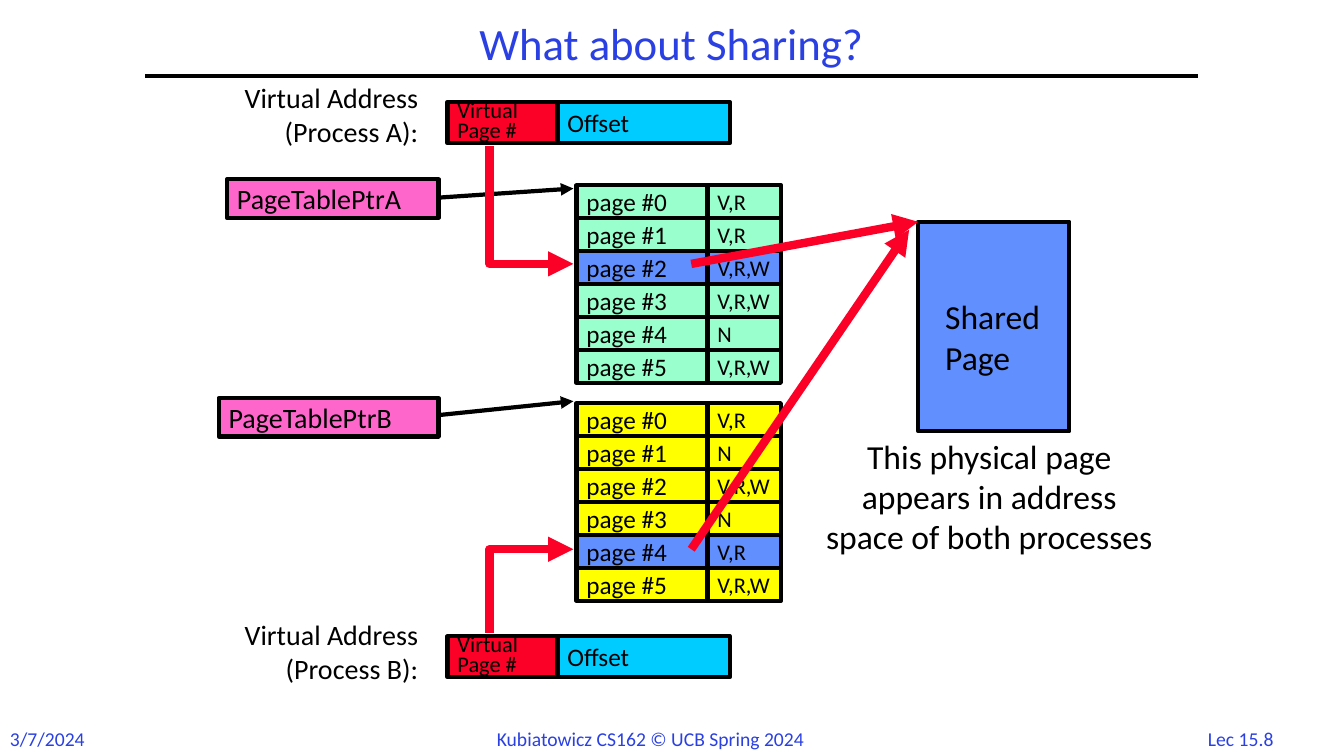
"""Build a slide on two processes that share one physical page."""
from lxml.etree import SubElement
from pptx import Presentation
from pptx.dml.color import RGBColor
from pptx.enum.shapes import MSO_CONNECTOR, MSO_SHAPE
from pptx.enum.text import MSO_ANCHOR, PP_ALIGN
from pptx.oxml.ns import qn
from pptx.util import Cm, Pt

BLACK = RGBColor(0, 0, 0)
BLUE = RGBColor(0x2A, 0x40, 0xE2)
RED = RGBColor(0xFC, 0x01, 0x28)
CYAN = RGBColor(0, 0xCC, 0xFF)
PINK = RGBColor(0xFF, 0x66, 0xCC)
GREEN = RGBColor(0x99, 0xFF, 0xCC)
YELLOW = RGBColor(0xFF, 0xFF, 0)
SHARED = RGBColor(0x61, 0x8F, 0xFD)
LEFT, MID, RIGHT = PP_ALIGN.LEFT, PP_ALIGN.CENTER, PP_ALIGN.RIGHT

TITLE = "What about Sharing?"
FOOT = [
    ("3/7/2024", 0, 2.44, LEFT),
    ("Kubiatowicz CS162 © UCB Spring 2024", 12.27, 9.35, LEFT),
    ("Lec 15.8", 29.9, 2.74, MID),
]
CAPTION = "This physical page\nappears in address\nspace of both processes"
TASKS = [
    dict(name="A", rights=["V,R", "V,R", "V,R,W", "V,R,W", "N", "V,R,W"],
         hit=2, fill=GREEN, top=4.67, label=1.91, addr=2.57, turn=(3.68, 6.65),
         ptr=(5.72, 4.52, 5.33, 0.97), link=(4.98, 4.75), end=(23.14, 5.59)),
    dict(name="B", rights=["V,R", "N", "V,R,W", "N", "V,R", "V,R,W"],
         hit=4, fill=YELLOW, top=10.16, label=15.44, addr=16.03, turn=(15.95, 13.84),
         ptr=(5.51, 10.03, 5.54, 0.97), link=(10.46, 10.11), end=(22.91, 5.79)),
]
ROW = 0.83
PAGE_X, PAGE_W = 14.53, 3.33
RIGHT_X, RIGHT_W = 17.83, 1.85
TIP_X = 14.45

deck = Presentation()
deck.slide_width, deck.slide_height = Cm(33.87), Cm(19.05)
slide = deck.slides.add_slide(deck.slide_layouts[6])
shapes = slide.shapes


def write(text, box, size=20, color=BLACK, fill=None, align=LEFT, space=None,
          anchor=None, wrap=False):
    """Add text in a plain box, or in a bordered one when a fill is given."""
    place = [Cm(n) for n in box]
    if fill is None:
        item = shapes.add_textbox(*place)
    else:
        item = shapes.add_shape(MSO_SHAPE.RECTANGLE, *place)
        item.shadow.inherit = False
        item.fill.solid()
        item.fill.fore_color.rgb = fill
        item.line.color.rgb = BLACK
        item.line.width = Pt(3)
        anchor = MSO_ANCHOR.MIDDLE
    frame = item.text_frame
    frame.word_wrap = wrap
    frame.vertical_anchor = anchor or MSO_ANCHOR.TOP
    for i, part in enumerate(text.split("\n") if text else []):
        para = frame.add_paragraph() if i else frame.paragraphs[0]
        para.alignment = align
        if space:
            para.line_spacing = space
        run = para.add_run()
        run.text = part
        run.font.name = "Calibri"
        run.font.size = Pt(size)
        run.font.color.rgb = color


def stroke(item, color, width, head=True):
    """Set the line style and the arrowhead."""
    item.line.color.rgb = color
    item.line.width = Pt(width)
    if head:
        SubElement(item.line._get_or_add_ln(), qn("a:tailEnd"), type="triangle")


def link(x1, y1, x2, y2, color=BLACK, width=3, head=True):
    """Draw a straight line."""
    item = shapes.add_connector(MSO_CONNECTOR.STRAIGHT, Cm(x1), Cm(y1), Cm(x2), Cm(y2))
    stroke(item, color, width, head)
    SubElement(item._element.spPr, qn("a:effectLst"))


def bend(y1, y2, x1=12.34, x2=TIP_X):
    """Draw the elbow arrow from an address to its page."""
    path = shapes.build_freeform(Cm(x1), Cm(y1))
    path.add_line_segments([(Cm(x1), Cm(y2)), (Cm(x2), Cm(y2))], close=False)
    item = path.convert_to_shape()
    item.shadow.inherit = False
    item.fill.background()
    stroke(item, RED, 6)


for text, x, w, align in FOOT:
    write(text, (x, 18.19, w, 0.86), size=14, color=BLUE, align=align)
link(3.66, 1.91, 30.2, 1.91, head=False)
write(TITLE, (3.66, 0.43, 26.52, 1.47), size=32, color=BLUE, align=MID,
      space=0.9, anchor=MSO_ANCHOR.MIDDLE, wrap=True)

for task in TASKS:
    name, addr = task["name"], task["addr"]
    write(f"Virtual Address\n(Process {name}):", (5.51, task["label"], 5.28, 1.96), align=RIGHT)
    write("Offset", (14.05, addr, 4.34, 1.04), size=18, fill=CYAN)
    write("Virtual\nPage #", (11.28, addr, 2.77, 1.04), size=16, fill=RED, space=0.75)
    write(f"PageTablePtr{name}", task["ptr"], fill=PINK)
    start, stop = task["link"]
    link(11.05, start, TIP_X, stop)
    rows = list(enumerate(task["rights"]))
    rows.sort(key=lambda row: row[0] == task["hit"])
    for i, right in rows:
        fill = SHARED if i == task["hit"] else task["fill"]
        y = task["top"] + i * ROW
        write(f"page #{i}", (PAGE_X, y, PAGE_W, ROW), size=18, fill=fill)
        write(right, (RIGHT_X, y, RIGHT_W, ROW), size=16, fill=fill)
    bend(*task["turn"])

write("", (23.14, 5.59, 3.81, 5.28), fill=SHARED)
write("Shared\nPage", (23.57, 7.34, 3.28, 2.31), size=24)
write(CAPTION, (20.04, 10.85, 9.78, 3.33), size=24, align=MID)
for task in TASKS:
    link(17.42, task["turn"][1], *task["end"], color=RED, width=6)

deck.save("out.pptx")
